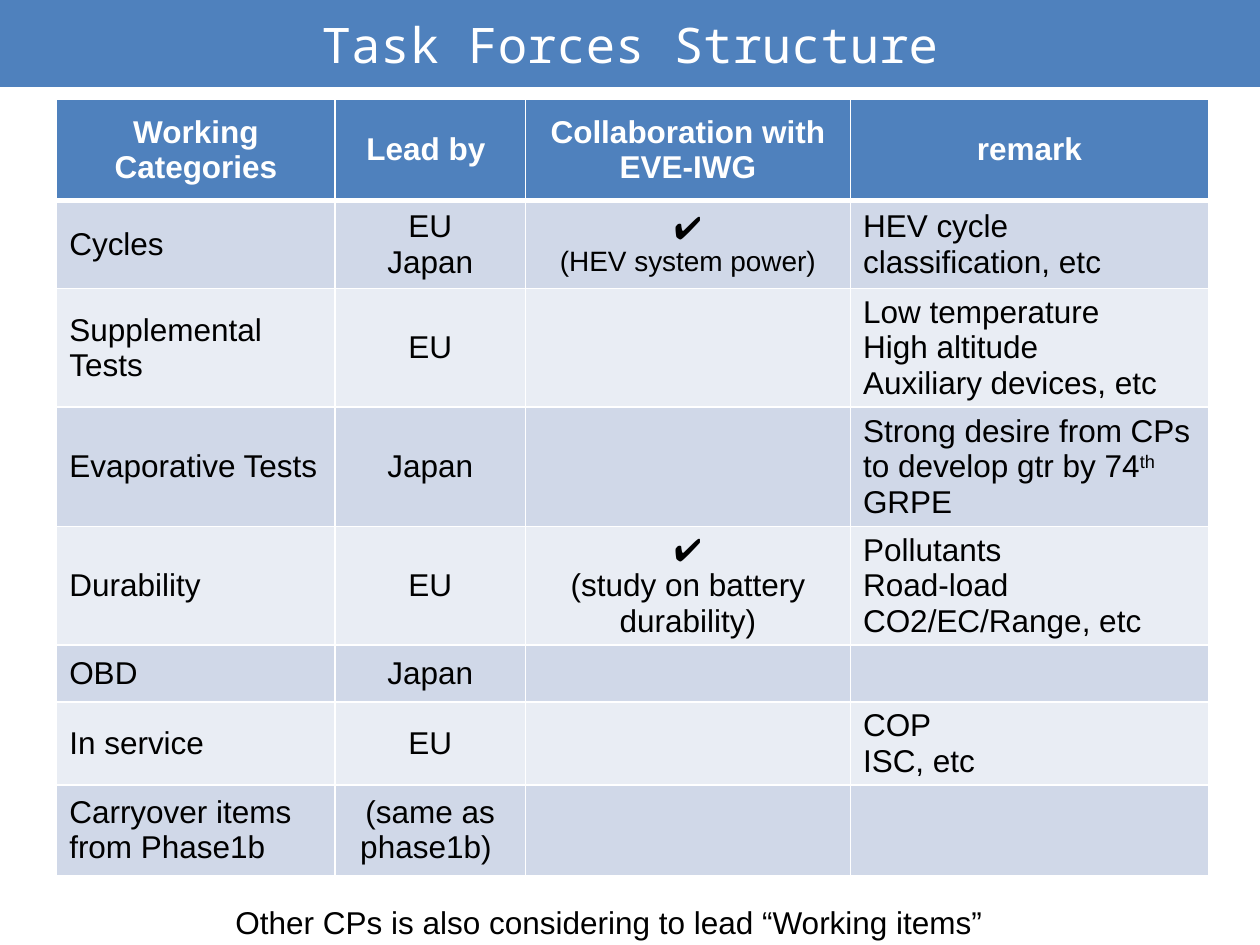
from lxml.etree import SubElement
from pptx import Presentation
from pptx.dml.color import RGBColor
from pptx.enum.text import MSO_ANCHOR as Anchor, MSO_AUTO_SIZE as AutoSize, PP_ALIGN as Align
from pptx.oxml.ns import qn
from pptx.util import Inches, Pt

GRID_COLUMNS, GRID_ROWS = 100, 75
BLUE, WHITE, BLACK = "4F81BD", "FFFFFF", "000000"
BANDS = ("D0D8E8", "E9EDF4")

COLUMN_SPANS = (22.1, 15.1, 25.8, 28.4)
ROW_SPANS = (8, 7, 9.3, 9.5, 9, 4.5, 5.5, 7.2)
TASK_FORCES = (
    ("Working\nCategories", "Lead by ", "Collaboration with EVE-IWG", "remark"),
    ("Cycles", "EU\nJapan", "✔\n(HEV system power)", "HEV cycle classification, etc"),
    ("Supplemental Tests", "EU", "", "Low temperature\nHigh altitude\nAuxiliary devices, etc"),
    ("Evaporative Tests", "Japan", "", "Strong desire from CPs to develop gtr by 74"),
    ("Durability", "EU", "✔\n(study on battery durability)", "Pollutants\nRoad-load\nCO2/EC/Range, etc"),
    ("OBD", "Japan", "", ""),
    ("In service", "EU", "", "COP\nISC, etc"),
    ("Carryover items from Phase1b", "(same as phase1b) ", "", ""),
)


def color(value):
    return RGBColor.from_string(value)


class Deck:
    def __init__(self, font="Arial", size=18):
        self.font, self.size = font, size
        self.prs = Presentation()
        self.prs.slide_width, self.prs.slide_height = Inches(10), Inches(7.5)
        self.slide = self.prs.slides.add_slide(self.prs.slide_layouts[5])

    def across(self, columns):
        return round(self.prs.slide_width * columns / GRID_COLUMNS)

    def down(self, rows):
        return round(self.prs.slide_height * rows / GRID_ROWS)

    def area(self, left, top, width, height):
        return self.across(left), self.down(top), self.across(width), self.down(height)

    def format(self, frame, ink=BLACK, align=Align.LEFT, bold=False, size=None, font=None):
        for paragraph in frame.paragraphs:
            paragraph.alignment = align
            for run in paragraph.runs:
                run.font.name = font or self.font
                run.font.size = Pt(size or self.size)
                run.font.bold = bold
                run.font.color.rgb = color(ink)

    def title(self, text, *place):
        heading = self.slide.shapes.title
        heading.left, heading.top, heading.width, heading.height = self.area(*place)
        heading.fill.solid()
        heading.fill.fore_color.rgb = color(BLUE)
        heading.text_frame.text = text
        heading.text_frame.vertical_anchor = Anchor.MIDDLE
        self.format(heading.text_frame, WHITE, Align.CENTER, size=28, font="Noto Sans Mono")

    def border(self, cell, side, width):
        properties = cell._tc.get_or_add_tcPr()
        edge = SubElement(properties, qn(f"a:ln{side}"), w=str(Pt(width)))
        SubElement(SubElement(edge, qn("a:solidFill")), qn("a:srgbClr"), val=WHITE)

    def cell(self, cell, text, row, column):
        header = row == 0
        heavy = {(0, "B"), (1, "T")}
        for side in "LRTB":
            self.border(cell, side, 3 if (row, side) in heavy else 1)
        cell.fill.solid()
        cell.fill.fore_color.rgb = color(BLUE if header else BANDS[(row - 1) % 2])
        cell.vertical_anchor = Anchor.MIDDLE
        cell.text_frame.text = text
        centred = header or column in (1, 2)
        self.format(cell.text_frame, WHITE if header else BLACK,
                    Align.CENTER if centred else Align.LEFT, header)

    def table(self, content, column_spans, row_spans, *place):
        holder = self.slide.shapes.add_table(len(row_spans), len(column_spans), *self.area(*place))
        table = holder.table
        for column, span in zip(table.columns, column_spans):
            column.width = self.across(span)
        for row, span in zip(table.rows, row_spans):
            row.height = self.down(span)
        holder.height = self.down(place[-1])
        for r, entries in enumerate(content):
            for c, text in enumerate(entries):
                self.cell(table.cell(r, c), text, r, c)
        return table

    def ordinal(self, cell, suffix, rest):
        paragraph = cell.text_frame.paragraphs[0]
        raised = paragraph.add_run()
        raised.text = suffix
        raised.font._element.set("baseline", "30000")
        paragraph.add_run().text = rest
        self.format(cell.text_frame)

    def note(self, text, *place):
        frame = self.slide.shapes.add_textbox(*self.area(*place)).text_frame
        frame.text = text
        frame.word_wrap = False
        frame.auto_size = AutoSize.SHAPE_TO_FIT_TEXT
        self.format(frame)


def main():
    deck = Deck()
    deck.title("Task Forces Structure", 0, 0, 100, 6.9)
    forces = deck.table(TASK_FORCES, COLUMN_SPANS, ROW_SPANS, 4.5, 7.9, 91.4, 63.6)
    system_power = forces.cell(1, 2).text_frame.paragraphs[1]
    system_power.runs[0].font.size = Pt(16)
    deck.ordinal(forces.cell(3, 3), "th", " GRPE")
    deck.note("Other CPs is also considering to lead “Working items”", 17.7, 71.2, 61.9, 4)
    deck.prs.save("out.pptx")


if __name__ == "__main__":
    main()
